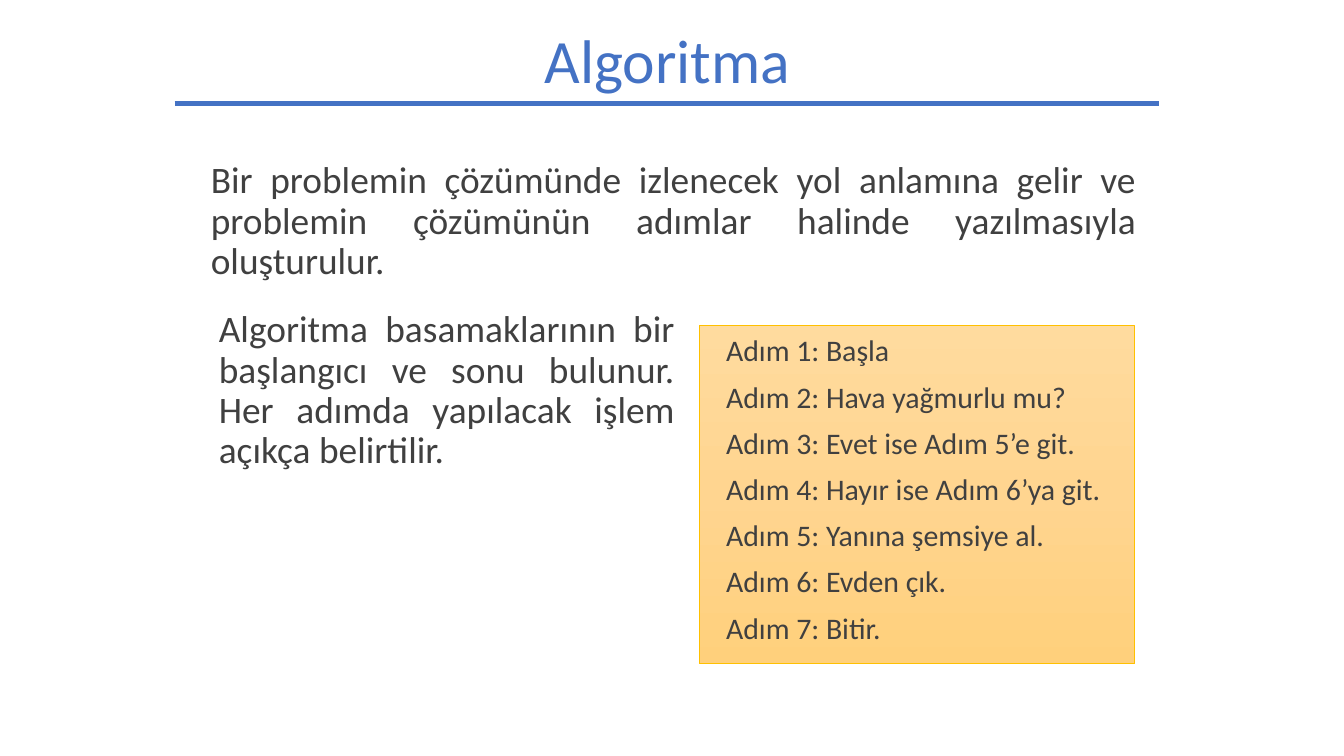
from copy import deepcopy
from dataclasses import dataclass

from pptx import Presentation
from pptx import util as u
from pptx.dml.color import RGBColor
from pptx.enum import shapes, text
from pptx.oxml.ns import qn

COLORS = {
    "accent": "4472C4",
    "body": "404040",
    "border": "FFC000",
    "panel_top": "FFDB9E",
    "panel_middle": "FFD590",
    "panel_bottom": "FFD07C",
}
CELL = u.Inches(0.1)  # the slide is a grid of 100 columns by 56.25 rows
COLUMNS, ROWS = 100, 100 * 9 / 16


@dataclass(frozen=True)
class Area:
    col: float
    row: float
    cols: float
    rows: float

    def lengths(self) -> tuple[int, ...]:
        return tuple(cells(n) for n in (self.col, self.row, self.cols, self.rows))


@dataclass(frozen=True)
class Style:
    size: float
    color: str
    align: text.PP_ALIGN
    anchor: text.MSO_ANCHOR = text.MSO_ANCHOR.TOP
    insets: tuple[float, ...] = (1, 0.5, 1, 0.5)  # left, top, right, bottom


@dataclass(frozen=True)
class Passage:
    area: Area
    words: str


TITLE_AREA = Area(13.75, 1.1, 71.8, 7.3)
STEPS_AREA = Area(52.03, 24.2, 32.4, 25.2)
TITLE_STYLE = Style(33, "accent", text.PP_ALIGN.CENTER, text.MSO_ANCHOR.MIDDLE)
PASSAGE_STYLE = Style(20, "body", text.PP_ALIGN.JUSTIFY)
STEPS_STYLE = Style(16, "body", text.PP_ALIGN.LEFT, insets=(2, 0.8, 1, 0.5))

PASSAGES = [
    Passage(Area(15.3, 22.62, 35.9, 15),
            "Algoritma basamaklarının bir başlangıcı ve sonu bulunur. "
            "Her adımda yapılacak işlem açıkça belirtilir."),
    Passage(Area(14.7, 11.54, 70.85, 13.4),
            "Bir problemin çözümünde izlenecek yol anlamına gelir ve problemin "
            "çözümünün adımlar halinde yazılmasıyla oluşturulur."),
]
STEPS = ["Başla", "Hava yağmurlu mu?", "Evet ise Adım 5’e git.",
         "Hayır ise Adım 6’ya git.", "Yanına şemsiye al.", "Evden çık.", "Bitir."]


def cells(count: float) -> int:
    return round(count * CELL)


def rgb(name: str) -> RGBColor:
    return RGBColor.from_string(COLORS[name])


def write(shape, lines: list[str], style: Style) -> None:
    frame = shape.text_frame
    left, top, right, bottom = map(cells, style.insets)
    frame_format = {
        "word_wrap": True, "auto_size": text.MSO_AUTO_SIZE.NONE,
        "vertical_anchor": style.anchor, "margin_left": left,
        "margin_top": top, "margin_right": right, "margin_bottom": bottom,
    }
    for key, value in frame_format.items():
        setattr(frame, key, value)
    frame.text = "\n".join(lines)
    for index, paragraph in enumerate(frame.paragraphs):
        paragraph.alignment = style.align
        paragraph.line_spacing = 0.9
        paragraph.space_before = u.Pt(7.5 if index else 0)
        for key, value in {"name": "Calibri", "size": u.Pt(style.size)}.items():
            setattr(paragraph.font, key, value)
        paragraph.font.color.rgb = rgb(style.color)


def add_title(slide) -> None:
    title = slide.shapes.title
    for key, value in zip(("left", "top", "width", "height"), TITLE_AREA.lengths()):
        setattr(title, key, value)
    write(title, ["Algoritma"], TITLE_STYLE)


def add_title_rule(slide) -> None:
    row = cells(7.7)
    rule = slide.shapes.add_connector(
        shapes.MSO_CONNECTOR.STRAIGHT, cells(13), row, cells(86.24), row)
    rule.line.color.rgb = rgb("accent")
    rule.line.width = u.Pt(2.25)
    properties = rule._element.spPr
    properties.append(properties.makeelement(qn("a:effectLst"), {}))


def add_passage(slide, passage: Passage) -> None:
    box = slide.shapes.add_textbox(*passage.area.lengths())
    write(box, [passage.words], PASSAGE_STYLE)


def add_steps_panel(slide) -> None:
    panel = slide.shapes.add_shape(
        shapes.MSO_SHAPE.RECTANGLE, *STEPS_AREA.lengths())
    panel.shadow.inherit = False
    panel.fill.gradient()
    panel.fill.gradient_angle = 270
    stop_list = panel._element.spPr.find(".//" + qn("a:gsLst"))
    stop_list.insert(1, deepcopy(stop_list[0]))
    names = ("panel_top", "panel_middle", "panel_bottom")
    for index, (stop, name) in enumerate(zip(panel.fill.gradient_stops, names)):
        stop.position = index / 2
        stop.color.rgb = rgb(name)
    panel.line.color.rgb = rgb("border")
    panel.line.width = u.Pt(0.5)
    lines = [f"Adım {number}: {step}" for number, step in enumerate(STEPS, 1)]
    write(panel, lines, STEPS_STYLE)


def main() -> None:
    deck = Presentation()
    deck.slide_width, deck.slide_height = cells(COLUMNS), cells(ROWS)
    slide = deck.slides.add_slide(deck.slide_layouts[5])
    beginning_and_end, definition = PASSAGES
    add_title(slide)
    add_passage(slide, beginning_and_end)
    add_steps_panel(slide)
    add_title_rule(slide)
    add_passage(slide, definition)
    deck.save("out.pptx")


if __name__ == "__main__":
    main()
